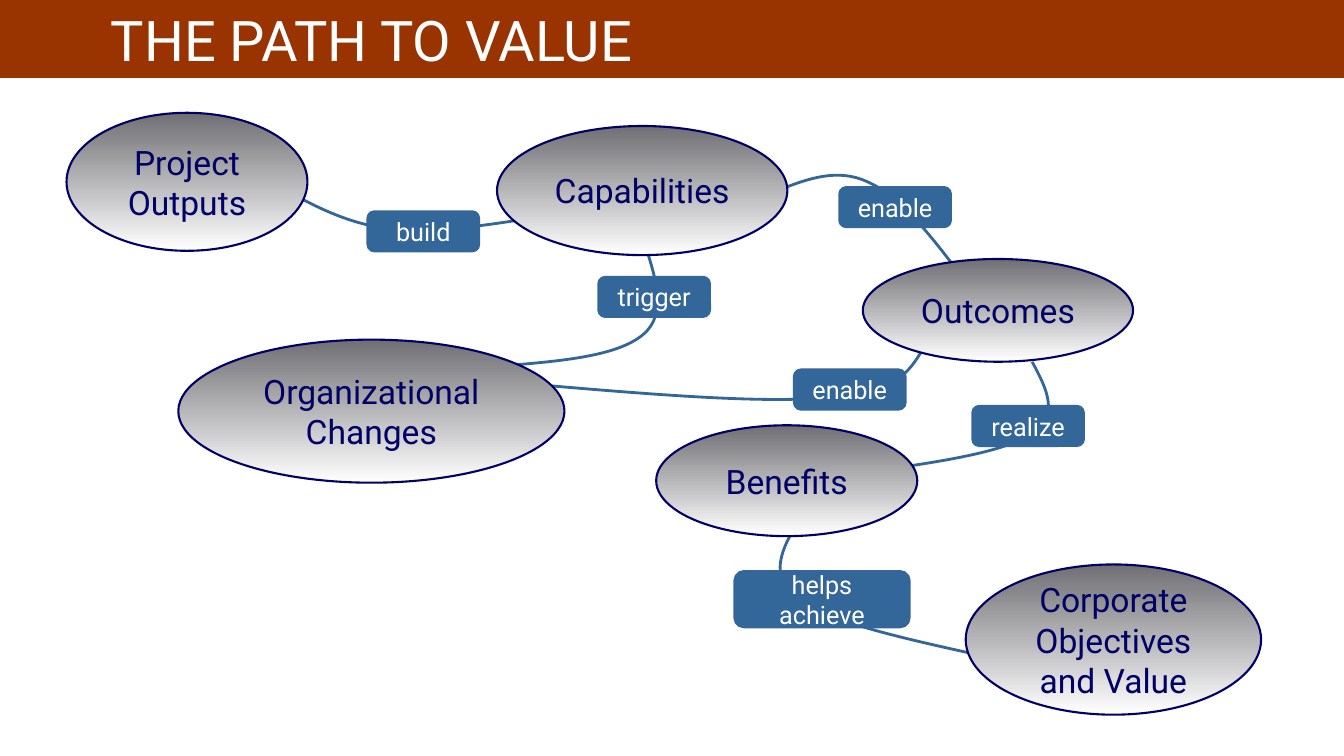
from dataclasses import dataclass

import pptx
import pptx.dml.color
import pptx.enum.shapes
import pptx.enum.text
import pptx.oxml
import pptx.oxml.ns
import pptx.util

Pt = pptx.util.Pt
RGB = pptx.dml.color.RGBColor.from_string
MSO_SHAPE = pptx.enum.shapes.MSO_SHAPE
PP_ALIGN = pptx.enum.text.PP_ALIGN
MSO_ANCHOR = pptx.enum.text.MSO_ANCHOR


@dataclass(frozen=True)
class Theme:
    font: str = "Roboto"
    banner: str = "993300"
    light: str = "FFFFFF"
    navy: str = "000066"
    blue: str = "336699"
    gray: str = "6F6F74"
    title_size: int = 40
    stage_size: int = 24
    verb_size: int = 18


THEME = Theme()

# Name, left, top, width, height
STAGES = [
    ("Project Outputs", 47.5, 80.6, 172.1, 98.6),
    ("Capabilities", 355, 90, 207.4, 92.2),
    ("Outcomes", 616.3, 185, 193, 73.4),
    ("Organizational Changes", 127.4, 242.6, 275.8, 102.2),
    ("Benefits", 468.7, 303.8, 186.5, 79.2),
    ("Corporate Objectives and Value", 689.8, 403.2, 211, 107.3),
]

# Verb, left, top
VERBS = [
    ("build", 262.8, 151.2),
    ("enable", 599.8, 133.9),
    ("trigger", 427.7, 198),
    ("enable", 567.4, 264.2),
    ("realize", 694.8, 290.2),
]

# Start point, then three points for each Bezier segment
ROUTES = [
    [(378, 274.3), (462.2, 281.5), (546.5, 288.7), (594, 283.7),
     (641.5, 279.4), (651.6, 262.1), (661.7, 245.5)],
    [(459.4, 170.6), (468, 197.3), (477.4, 223.9), (459.4, 239),
     (440.6, 254.9), (395.3, 258.5), (349.9, 262.1)],
    [(570.2, 372.2), (558.7, 391.7), (547.9, 411.8), (570.2, 428.4),
     (592.6, 444.2), (647.3, 456.5), (702.7, 468.7)],
    [(737.3, 258.5), (747.4, 277.2), (757.4, 296.6), (737.3, 309.6),
     (717.1, 323.3), (666.7, 330.5), (616.3, 337.7)],
    [(203, 135.4), (226.8, 148.3), (251.3, 161.3), (284.4, 164.2),
     (317.5, 167), (382.3, 154.8), (401.8, 152.6)],
    [(550.1, 138.2), (573.8, 128.9), (596.9, 118.8), (620.6, 130.3),
     (644.4, 141.1), (668.2, 172.8), (691.9, 203.8)],
]


def write(shape, text, size, color, align=PP_ALIGN.CENTER, wrap=True):
    frame = shape.text_frame
    frame.text = text
    frame.word_wrap = wrap
    frame.vertical_anchor = MSO_ANCHOR.MIDDLE
    paragraph = frame.paragraphs[0]
    paragraph.alignment = align
    paragraph.font.name = THEME.font
    paragraph.font.size = Pt(size)
    paragraph.font.color.rgb = RGB(color)


def outline(shape, color, width):
    shape.shadow.inherit = False
    shape.line.color.rgb = RGB(color)
    shape.line.width = Pt(width)


def place(shape, left, top, width, height):
    shape.left, shape.top = Pt(left), Pt(top)
    shape.width, shape.height = Pt(width), Pt(height)


def add_banner(slide, text):
    banner = slide.shapes.title
    place(banner, 0, 0, 960, 55.6)
    banner.fill.solid()
    banner.fill.fore_color.rgb = RGB(THEME.banner)
    write(banner, text, THEME.title_size, THEME.light, PP_ALIGN.LEFT)
    banner.text_frame.auto_size = pptx.enum.text.MSO_AUTO_SIZE.NONE
    banner.text_frame.margin_left = Pt(79.2)


def add_route(slide, points):
    """Draw an arrow of cubic Bezier segments through the points."""
    corners = [(Pt(x), Pt(y)) for x, y in points]
    builder = slide.shapes.build_freeform(*corners[0])
    builder.add_line_segments(corners[1:], close=False)
    route = builder.convert_to_shape()
    route.fill.background()
    outline(route, THEME.blue, 2)

    qn = pptx.oxml.ns.qn
    segments = list(route.element.iter(qn("a:lnTo")))
    for first in range(0, len(segments), 3):
        triple = segments[first:first + 3]
        curve = triple[0].makeelement(qn("a:cubicBezTo"))
        triple[0].addprevious(curve)
        for segment in triple:
            curve.append(segment[0])
            segment.getparent().remove(segment)

    arrowhead = pptx.oxml.parse_xml(
        f'<a:tailEnd {pptx.oxml.ns.nsdecls("a")} type="triangle"/>')
    route.line._get_or_add_ln().append(arrowhead)


def add_stage(slide, name, *bounds):
    stage = slide.shapes.add_shape(MSO_SHAPE.OVAL, *map(Pt, bounds))
    stage.fill.gradient()
    stage.fill.gradient_angle = 270
    for stop, color in zip(stage.fill.gradient_stops, (THEME.gray, THEME.light)):
        stop.color.rgb = RGB(color)
    outline(stage, THEME.navy, 1.5)
    write(stage, name, THEME.stage_size, THEME.navy)


def add_verb(slide, verb, left, top, width=79.2, height=28.1, wrap=False):
    label = slide.shapes.add_shape(
        MSO_SHAPE.ROUNDED_RECTANGLE, *map(Pt, (left, top, width, height)))
    label.fill.solid()
    label.fill.fore_color.rgb = RGB(THEME.blue)
    outline(label, THEME.blue, 2)
    write(label, verb, THEME.verb_size, THEME.light, wrap=wrap)


def main():
    deck = pptx.Presentation()
    deck.slide_width, deck.slide_height = Pt(960), Pt(540)
    slide = deck.slides.add_slide(deck.slide_layouts.get_by_name("Title Only"))
    add_banner(slide, "THE PATH TO VALUE")
    for points in ROUTES:
        add_route(slide, points)
    for stage in STAGES:
        add_stage(slide, *stage)
    for verb in VERBS:
        add_verb(slide, *verb)
    add_verb(slide, "helps achieve", 524.9, 408.2, 124.6, 39.6, wrap=True)
    deck.save("out.pptx")


if __name__ == "__main__":
    main()
